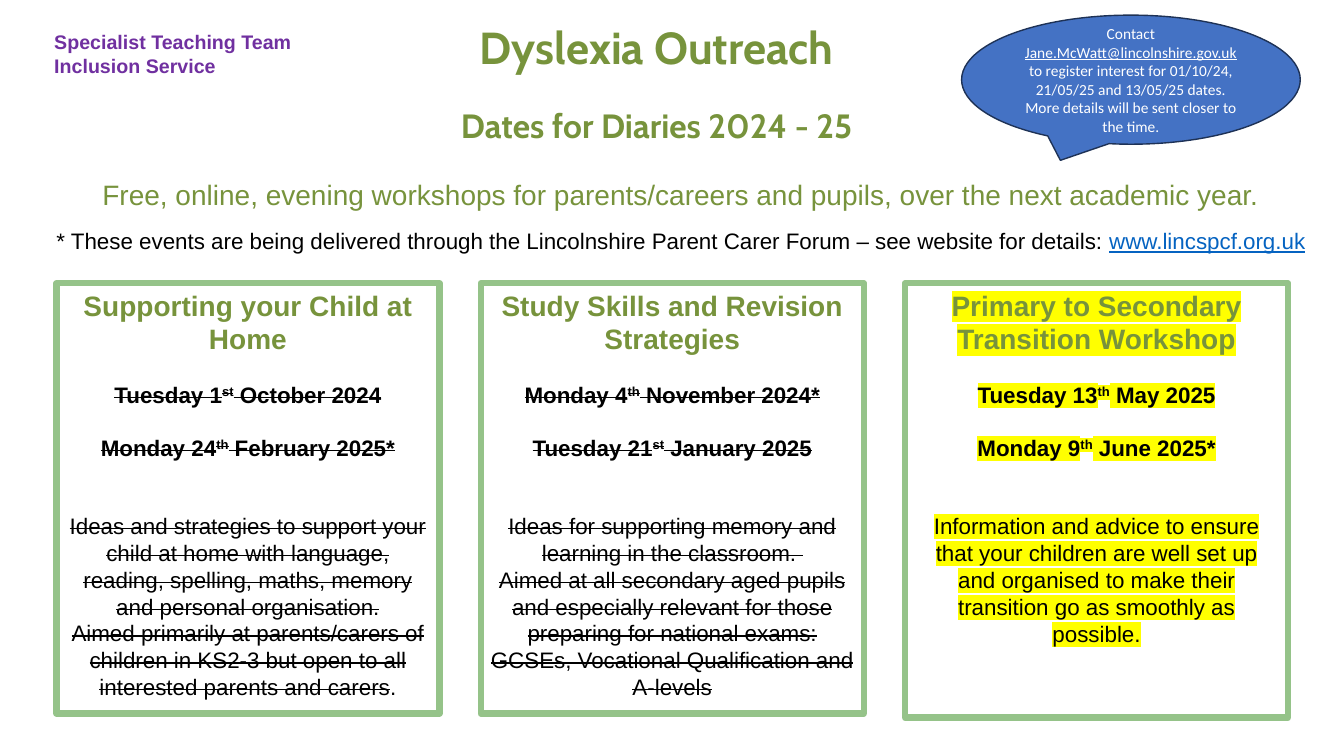
import pptx
import pptx.util
import pptx.dml.color
import pptx.enum.shapes
import pptx.enum.text
import pptx.oxml.ns
import lxml.etree

Pt = pptx.util.Pt
ALIGN = pptx.enum.text.PP_ALIGN
ANCHOR = pptx.enum.text.MSO_ANCHOR
SHAPE = pptx.enum.shapes.MSO_SHAPE
qn = pptx.oxml.ns.qn

COLOURS = {
    "olive": "77933C",
    "purple": "7030A0",
    "black": "000000",
    "white": "FFFFFF",
    "link": "0563C1",
    "frame": "95C389",
    "bubble": "4472C4",
    "bubble_edge": "1E3256",
    "marker": "FFFF00",
}

WORKSHOPS = [
    {
        "heading": "Supporting your Child at Home",
        "dates": [("Tuesday 1", "st", " October 2024"), ("Monday 24", "th", " February 2025*")],
        "details": [
            "Ideas and strategies to support your child at home with language, reading, "
            "spelling, maths, memory and personal organisation.",
            "Aimed primarily at parents/carers of children in KS2-3 but open to all "
            "interested parents and carers",
        ],
        "ending": ".",
        "past": True,
        "height": 307.4,
    },
    {
        "heading": "Study Skills and Revision Strategies",
        "dates": [("Monday 4", "th", " November 2024*"), ("Tuesday 21", "st", " January 2025")],
        "details": [
            "Ideas for supporting memory and learning in the classroom. ",
            "Aimed at all secondary aged pupils and especially relevant for those preparing "
            "for national exams: GCSEs, Vocational Qualification and A-levels",
        ],
        "ending": "",
        "past": True,
        "height": 307.4,
    },
    {
        "heading": "Primary to Secondary Transition Workshop",
        "dates": [("Tuesday 13", "th", " May 2025"), ("Monday 9", "th", " June 2025*")],
        "details": [
            "Information and advice to ensure that your children are well set up and "
            "organised to make their transition go as smoothly as possible.",
        ],
        "ending": "",
        "past": False,
        "height": 310.3,
    },
]


class Flyer:
    def __init__(self, slide, font="Arial"):
        self.slide = slide
        self.font = font

    def colour(self, name):
        return pptx.dml.color.RGBColor.from_string(COLOURS[name])

    def paragraph(self, frame, first=False, align=ALIGN.CENTER, before=0):
        paragraph = frame.paragraphs[0] if first else frame.add_paragraph()
        paragraph.alignment = align
        paragraph.line_spacing = 1.0
        paragraph.space_before = Pt(before)
        return paragraph

    def run(self, paragraph, words, size, colour="black", font=None, bold=False,
            underline=False, strike=False, raised=False, marker=False):
        run = paragraph.add_run()
        run.text = words
        run.font.size = Pt(size)
        run.font.bold = bold
        run.font.underline = underline
        run.font.name = font or self.font
        run.font.color.rgb = self.colour(colour)
        properties = run._r.get_or_add_rPr()
        if strike:
            properties.set("strike", "sngStrike")
        if raised:
            properties.set("baseline", "30000")
        if marker:
            highlight = lxml.etree.Element(qn("a:highlight"))
            lxml.etree.SubElement(highlight, qn("a:srgbClr"), val=COLOURS["marker"])
            properties.find(qn("a:solidFill")).addnext(highlight)

    def title(self, left, top, width, height):
        title = self.slide.shapes.title
        title.left, title.top, title.width, title.height = map(Pt, (left, top, width, height))
        frame = title.text_frame
        frame.auto_size = pptx.enum.text.MSO_AUTO_SIZE.NONE
        frame.vertical_anchor = ANCHOR.TOP
        return frame

    def text(self, left, top, width, height, wrap=True):
        frame = self.slide.shapes.add_textbox(*map(Pt, (left, top, width, height))).text_frame
        frame.word_wrap = wrap
        return frame

    def panel(self, kind, left, top, width, height, edge, weight, fill=None, anchor=ANCHOR.TOP):
        panel = self.slide.shapes.add_shape(kind, *map(Pt, (left, top, width, height)))
        panel.shadow.inherit = False
        if fill:
            panel.fill.solid()
            panel.fill.fore_color.rgb = self.colour(fill)
        else:
            panel.fill.background()
        panel.line.color.rgb = self.colour(edge)
        panel.line.width = Pt(weight)
        panel.text_frame.word_wrap = True
        panel.text_frame.vertical_anchor = anchor
        return panel.text_frame

    def workshop(self, left, top, width, workshop):
        past = workshop["past"]
        card = self.panel(SHAPE.RECTANGLE, left, top, width, workshop["height"], "frame", 4.5)
        style = {"size": 16, "strike": past, "marker": not past}
        self.run(self.paragraph(card, first=True), workshop["heading"], 20, "olive",
                 bold=True, marker=not past)
        for day, suffix, month in workshop["dates"]:
            date = self.paragraph(card, before=18.4)
            self.run(date, day, bold=True, **style)
            self.run(date, suffix, bold=True, raised=True, **style)
            self.run(date, month, bold=True, **style)
        for index, words in enumerate(workshop["details"]):
            detail = self.paragraph(card, before=0 if index else 36.8)
            self.run(detail, words, **style)
        if workshop["ending"]:
            self.run(detail, workshop["ending"], 16)


def main():
    deck = pptx.Presentation()
    deck.slide_width, deck.slide_height = Pt(960), Pt(540)
    flyer = Flyer(deck.slides.add_slide(deck.slide_layouts[5]))

    heading = flyer.title(298, 10.8, 342, 97.2)
    flyer.run(flyer.paragraph(heading, first=True), "Dyslexia Outreach", 32, "olive",
              "Cabin", bold=True)
    flyer.run(flyer.paragraph(heading, before=21.9), "Dates for Diaries 2024 - 25", 24,
              "olive", "Cabin", bold=True)

    team = flyer.text(31.7, 18, 184.3, 41, wrap=False)
    for index, words in enumerate(("Specialist Teaching Team", "Inclusion Service")):
        flyer.run(flyer.paragraph(team, first=index == 0, align=ALIGN.LEFT), words, 14,
                  "purple", bold=True)

    intro = flyer.text(31.7, 123.1, 909.4, 82)
    flyer.run(flyer.paragraph(intro, first=True),
              "Free, online, evening workshops for parents/careers and pupils, "
              "over the next academic year.", 20, "olive")
    forum = flyer.paragraph(intro, before=11.5)
    flyer.run(forum, "* These events are being delivered through the Lincolnshire Parent "
              "Carer Forum – see website for details: ", 16)
    flyer.run(forum, "www.lincspcf.org.uk", 16, "link", underline=True)

    for index, workshop in enumerate(WORKSHOPS):
        flyer.workshop(40.3 + 303.1 * index, 202.3, 273.6, workshop)

    bubble = flyer.panel(SHAPE.OVAL_CALLOUT, 686.9, 10.8, 241.9, 92.2, "bubble_edge", 1,
                         "bubble", ANCHOR.MIDDLE)
    contact = flyer.paragraph(bubble, first=True)
    for words, underline in (
        ("Contact ", False),
        ("Jane.McWatt@lincolnshire.gov.uk ", True),
        ("to register interest for 01/10/24, 21/05/25 and 13/05/25 dates. "
         "More details will be sent closer to the time.", False),
    ):
        flyer.run(contact, words, 11, "white", "Calibri", underline=underline)

    deck.save("out.pptx")


if __name__ == "__main__":
    main()
